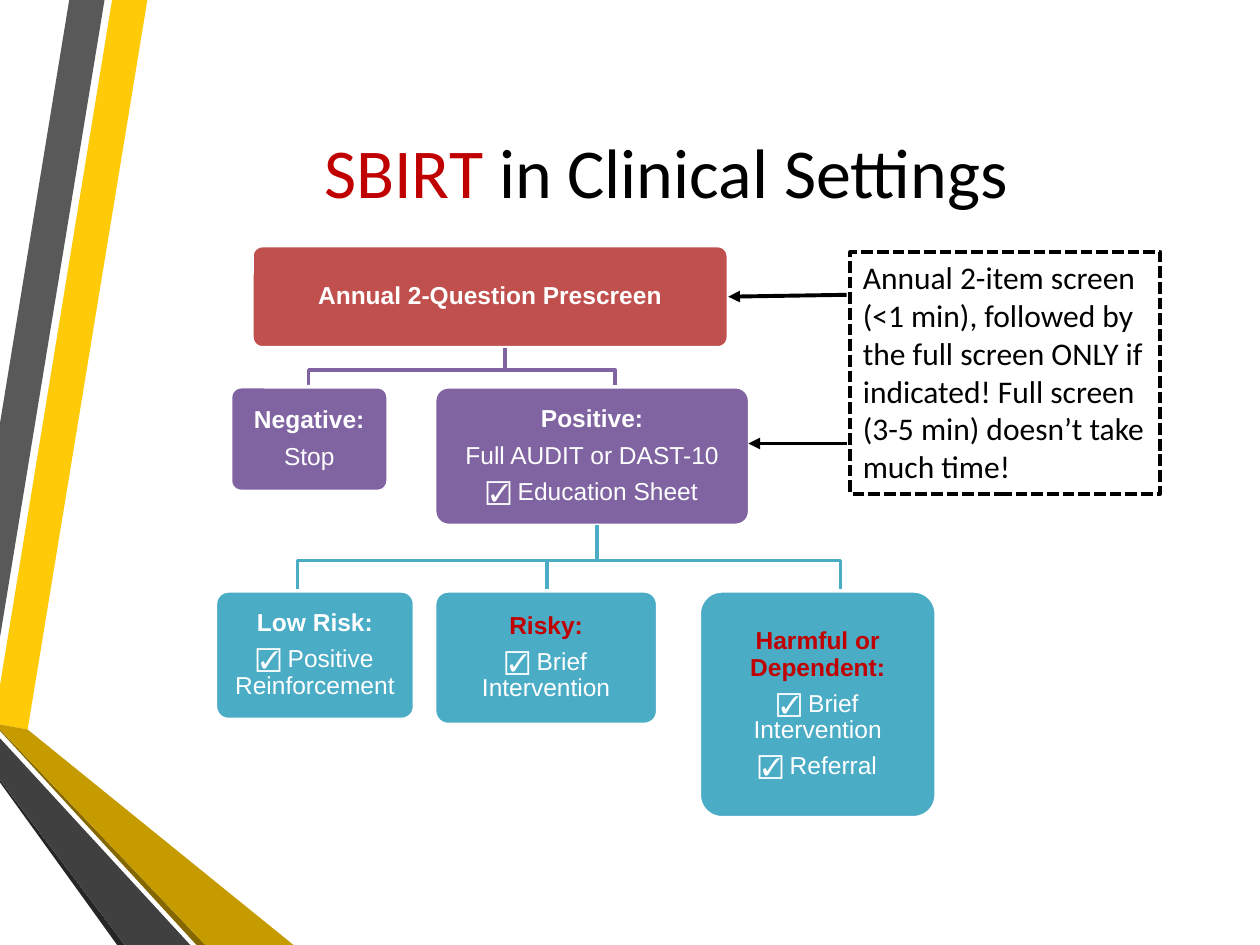
from lxml.etree import SubElement
from pptx import Presentation
from pptx.dml.color import RGBColor
from pptx.enum.dml import MSO_LINE
from pptx.enum.shapes import MSO_CONNECTOR, MSO_SHAPE
from pptx.enum.text import MSO_ANCHOR as Anchor, PP_ALIGN as Align
from pptx.oxml.ns import qn
from pptx.util import Inches, Pt

COLORS = {
    "white": "FFFFFF", "black": "000000", "accent": "C00000",
    "screen": "C0504D", "result": "8064A2", "risk": "4BACC6",
    "yellow": "FFCA08", "gray": "595959", "shadow": "262626",
    "olive": "846700", "gold": "C59B00", "charcoal": "404040",
}

RIBBONS = [
    ("yellow", [(0, 5.44), (0, 5.75), (0.22, 5.79), (1.17, 0), (0.89, 0)]),
    ("gray", [(0.83, 0), (0.55, 0), (0, 3.36), (0, 5.06)]),
    ("shadow", [(0, 6.19), (0, 6.21), (0.93, 7.5), (0.99, 7.5)]),
    ("olive", [(0, 5.79), (0, 5.8), (1.56, 7.5), (1.63, 7.5)]),
    ("gold", [(0, 5.79), (1.63, 7.5), (2.33, 7.5), (0.22, 5.79), (0, 5.75)]),
    ("charcoal", [(0, 6.19), (0.99, 7.5), (1.51, 7.5), (0, 5.86)]),
]

BRANCHES = [
    ("result", (2.3, 0.81), 0.74, (0.12, 1.12, 1.25, 0.83), "white",
     ["Negative:", "Stop"]),
    ("result", (2.3, 0.81), 3.17, (1.74, 1.12, 2.5, 1.1), "white",
     ["Positive:", "Full AUDIT or DAST-10", "☑ Education Sheet"]),
    ("risk", (3.03, 2.22), 0.65, (0, 2.74, 1.58, 1.02), "white",
     ["Low Risk:", "☑ Positive Reinforcement"]),
    ("risk", (3.03, 2.22), 2.63, (1.74, 2.74, 1.77, 1.06), "accent",
     ["Risky:", "☑ Brief Intervention"]),
    ("risk", (3.03, 2.22), 4.96, (3.84, 2.74, 1.88, 1.8), "accent",
     ["Harmful or Dependent:", "☑ Brief Intervention", "☑ Referral"]),
]


def color(name):
    """Return the named colour."""
    return RGBColor.from_string(COLORS[name])


def add_outline(page, left, top, points, close):
    """Build a freeform whose points are offsets in inches from a corner."""
    corners = [(Inches(left + x), Inches(top + y)) for x, y in points]
    builder = page.shapes.build_freeform(*corners[0])
    builder.add_line_segments(corners[1:], close=close)
    shape = builder.convert_to_shape()
    shape.shadow.inherit = False
    return shape


def add_ribbons(page, left, top):
    """Draw the folded ribbons along the left edge."""
    for name, points in RIBBONS:
        ribbon = add_outline(page, left, top, points, True)
        ribbon.fill.solid()
        ribbon.fill.fore_color.rgb = color(name)
        ribbon.line.fill.background()


def add_title(page, left, top, width, height):
    """Place and format the two-colour title."""
    title = page.shapes.title
    title.left, title.top = Inches(left), Inches(top)
    title.width, title.height = Inches(width), Inches(height)
    title.text_frame.vertical_anchor = Anchor.MIDDLE
    para = title.text_frame.paragraphs[0]
    para.alignment = Align.CENTER
    para.font.name, para.font.size = "Calibri", Pt(40)
    for text, name in (("SBIRT", "accent"), (" in Clinical Settings", "black")):
        span = para.add_run()
        span.text = text
        span.font.color.rgb = color(name)


def add_node(page, left, top, width, height, fill, heading, lines):
    """Draw a rounded box with a bold heading and plain lines."""
    node = page.shapes.add_shape(
        MSO_SHAPE.ROUNDED_RECTANGLE,
        Inches(left), Inches(top), Inches(width), Inches(height))
    node.adjustments[0] = 0.1
    node.shadow.inherit = False
    node.fill.solid()
    node.fill.fore_color.rgb = color(fill)
    node.line.color.rgb = color("white")
    node.line.width = Pt(2)
    frame = node.text_frame
    frame.word_wrap = True
    frame.vertical_anchor = Anchor.MIDDLE
    frame.margin_left = frame.margin_right = Inches(0.06)
    frame.margin_top = frame.margin_bottom = Inches(0.06)
    for index, text in enumerate(lines):
        para = frame.add_paragraph() if index else frame.paragraphs[0]
        para.text = text
        para.alignment = Align.CENTER
        para.line_spacing = 0.9
        if index:
            para.space_before = Pt(5.5)
        para.font.name, para.font.size = "Arial", Pt(14)
        para.font.bold = index == 0
        para.font.color.rgb = color("white" if index else heading)
    return node


def add_tree(page, left, top):
    """Draw the screening tree and return its root box."""
    root = add_node(page, left + 0.29, top, 3.78, 0.81, "screen", "white",
                    ["Annual 2-Question Prescreen"])
    for fill, (start_x, start_y), end_x, box, heading, lines in BRANCHES:
        x, y, width, height = box
        end_y = y + 0.04
        middle = (start_y + end_y) / 2
        points = [(start_x, start_y), (start_x, middle),
                  (end_x, middle), (end_x, end_y)]
        branch = add_outline(page, left, top, points, False)
        branch.fill.background()
        branch.line.color.rgb = color(fill)
        branch.line.width = Pt(2)
        add_node(page, left + x, top + y, width, height, fill, heading, lines)
    return root


def add_callout(page, left, top, width, height):
    """Draw the dashed comment box."""
    callout = page.shapes.add_textbox(
        Inches(left), Inches(top), Inches(width), Inches(height))
    callout.line.color.rgb = color("black")
    callout.line.width = Pt(2.25)
    callout.line.dash_style = MSO_LINE.SQUARE_DOT
    callout.text_frame.word_wrap = True
    para = callout.text_frame.paragraphs[0]
    para.text = ("Annual 2-item screen (<1 min), followed by the full screen "
                 "ONLY if indicated! Full screen (3-5 min) doesn’t take "
                 "much time!")
    para.font.name, para.font.size = "Calibri", Pt(18)
    para.font.color.rgb = color("black")


def add_arrow(page, start_x, end_x, y):
    """Draw a level arrow from the callout to a tree box."""
    arrow = page.shapes.add_connector(
        MSO_CONNECTOR.STRAIGHT,
        Inches(start_x), Inches(y), Inches(end_x), Inches(y))
    arrow.line.color.rgb = color("black")
    arrow.line.width = Pt(2.25)
    SubElement(arrow.line._get_or_add_ln(), qn("a:tailEnd"), type="triangle")
    SubElement(arrow._element.spPr, qn("a:effectLst"))
    return arrow


def main():
    """Build the slide and save the deck."""
    deck = Presentation()
    deck.slide_width, deck.slide_height = Inches(10), Inches(7.5)
    page = deck.slides.add_slide(deck.slide_layouts[5])
    add_ribbons(page, 0, 0)
    add_title(page, 1.07, 0.5, 8.43, 1.7)
    root = add_tree(page, 1.71, 1.95)
    add_callout(page, 6.75, 2, 2.46, 1.92)
    add_arrow(page, 6.72, 5.77, 2.34).end_connect(root, 3)
    add_arrow(page, 6.72, 5.94, 3.52)
    deck.save("out.pptx")


if __name__ == "__main__":
    main()
